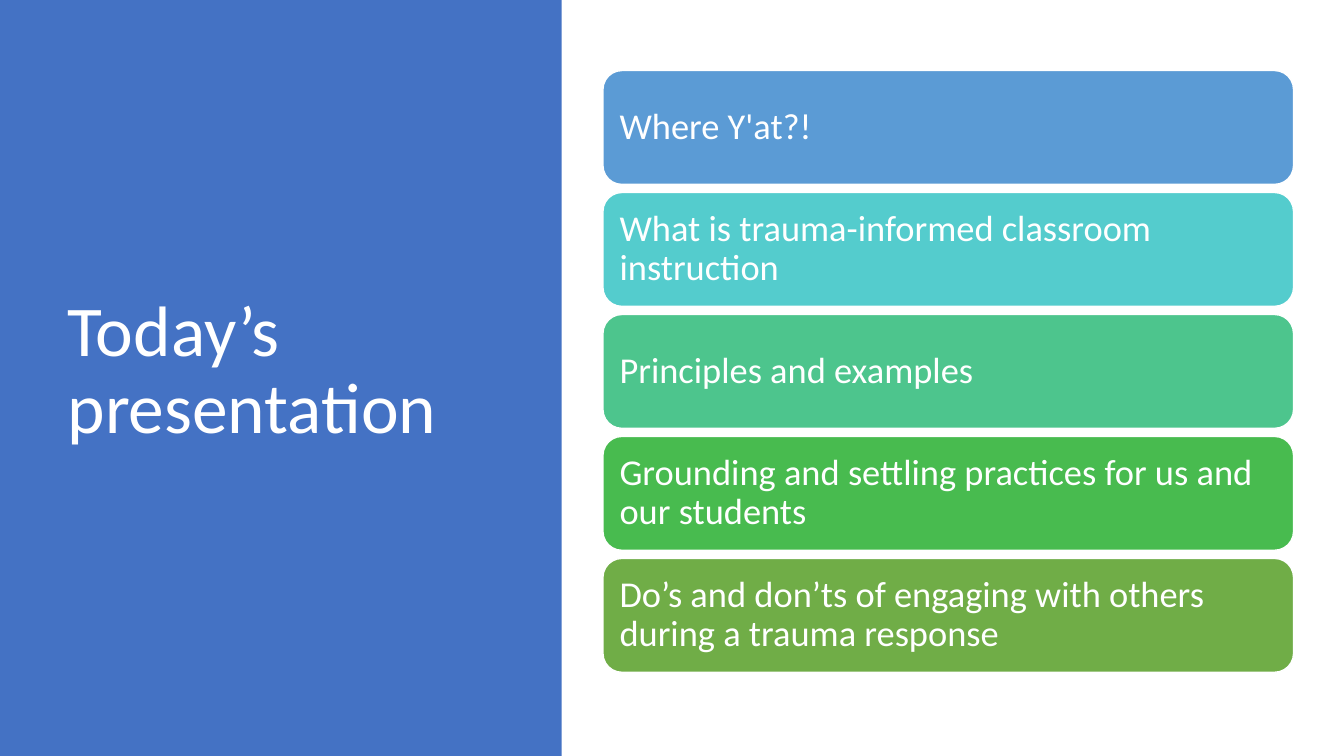
"""Build the agenda slide: a title panel beside a column of topic cards."""
from dataclasses import dataclass

from pptx import Presentation
from pptx.dml.color import RGBColor as Rgb
from pptx.enum.shapes import MSO_SHAPE as Preset
from pptx.enum.text import MSO_ANCHOR as Anchor, MSO_AUTO_SIZE as AutoSize, PP_ALIGN as Align
from pptx.shapes.autoshape import Shape
from pptx.slide import Slide
from pptx.text.text import TextFrame
from pptx.util import Inches, Pt


@dataclass(frozen=True)
class Theme:
    font: str = "Calibri"
    panel: str = "4472C4"
    white: str = "FFFFFF"
    title_size: int = 51
    topic_size: int = 26
    line_spacing: float = 0.9


@dataclass(frozen=True)
class Column:
    left: float
    top: float
    width: float
    row_height: float
    gap: float

    def row_top(self, row: int) -> float:
        """Return the top of a row in inches."""
        return self.top + row * (self.row_height + self.gap)


@dataclass(frozen=True)
class Topic:
    wording: str
    color: str


THEME = Theme()
WIDTH, HEIGHT = 13.33, 7.5
PANEL_WIDTH = 5.57
AGENDA = Column(left=5.98, top=0.7, width=6.85, row_height=1.13, gap=0.08)
TOPICS = [
    Topic("Where Y'at?!", "5B9BD5"),
    Topic("What is trauma-informed classroom instruction", "54CCCD"),
    Topic("Principles and examples", "4DC58D"),
    Topic("Grounding and settling practices for us and our students", "48BB4F"),
    Topic("Do’s and don’ts of engaging with others during a trauma response", "70AD47"),
]


def write(frame: TextFrame, wording: str, size: int) -> None:
    """Put white, left-aligned, vertically centred text in a frame."""
    frame.text = wording
    frame.word_wrap = True
    frame.auto_size = AutoSize.NONE
    frame.vertical_anchor = Anchor.MIDDLE
    paragraph = frame.paragraphs[0]
    paragraph.alignment = Align.LEFT
    paragraph.line_spacing = THEME.line_spacing
    font = paragraph.runs[0].font
    font.name = THEME.font
    font.size = Pt(size)
    font.color.rgb = Rgb.from_string(THEME.white)


def add_block(slide: Slide, preset: Preset, left: float, top: float,
              width: float, height: float, color: str) -> Shape:
    """Add a flat filled shape without an outline."""
    block = slide.shapes.add_shape(
        preset, Inches(left), Inches(top), Inches(width), Inches(height))
    block.shadow.inherit = False
    block.fill.solid()
    block.fill.fore_color.rgb = Rgb.from_string(color)
    block.line.fill.background()
    return block


def add_title_panel(slide: Slide) -> None:
    """Place the title over a full-height panel."""
    panel = add_block(slide, Preset.RECTANGLE, 0, 0, PANEL_WIDTH, HEIGHT, THEME.panel)
    title = slide.shapes.title
    title.element.addprevious(panel.element)
    title.left, title.top = Inches(0.57), Inches(0.68)
    title.width, title.height = Inches(4.16), Inches(6.02)
    write(title.text_frame, "Today’s presentation", THEME.title_size)


def add_topic(slide: Slide, row: int, topic: Topic) -> None:
    """Add one topic card to the agenda column."""
    card = add_block(slide, Preset.ROUNDED_RECTANGLE, AGENDA.left, AGENDA.row_top(row),
                     AGENDA.width, AGENDA.row_height, topic.color)
    card.line.color.rgb = Rgb.from_string(THEME.white)
    card.line.width = Pt(1)
    frame = card.text_frame
    frame.margin_left = frame.margin_right = Inches(0.11)
    frame.margin_top = frame.margin_bottom = Inches(0.11)
    write(frame, topic.wording, THEME.topic_size)


def main() -> None:
    """Build and save the presentation."""
    deck = Presentation()
    deck.slide_width, deck.slide_height = Inches(WIDTH), Inches(HEIGHT)
    slide = deck.slides.add_slide(deck.slide_layouts.get_by_name("Title Only"))
    add_title_panel(slide)
    for row, topic in enumerate(TOPICS):
        add_topic(slide, row, topic)
    deck.save("out.pptx")


if __name__ == "__main__":
    main()
